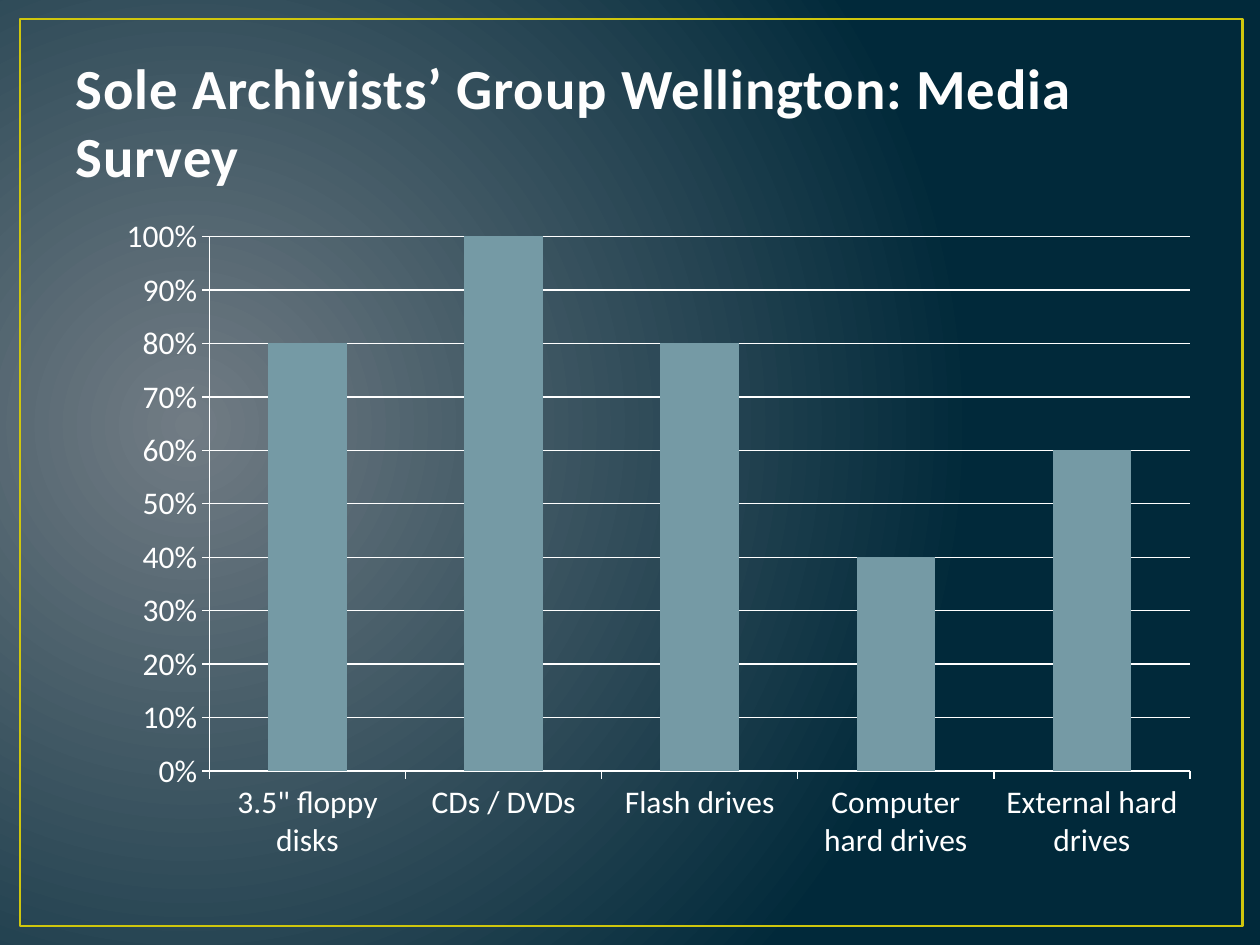
from dataclasses import dataclass

from lxml import etree
from pptx import Presentation
from pptx.chart.data import CategoryChartData
from pptx.dml.color import RGBColor
from pptx.enum.chart import XL_CHART_TYPE, XL_TICK_MARK
from pptx.enum.shapes import MSO_SHAPE
from pptx.enum.text import MSO_ANCHOR, MSO_AUTO_SIZE, PP_ALIGN
from pptx.oxml import parse_xml
from pptx.slide import Slide
from pptx.util import Inches, Pt

COLUMN = XL_CHART_TYPE.COLUMN_CLUSTERED
OUT, NONE = XL_TICK_MARK.OUTSIDE, XL_TICK_MARK.NONE
RECT = MSO_SHAPE.RECTANGLE
BOTTOM, LEFT = MSO_ANCHOR.BOTTOM, PP_ALIGN.LEFT
NO_FIT = MSO_AUTO_SIZE.NONE
SPACE = "http://schemas.openxmlformats.org/drawingml/2006/main"
WIDE, HIGH = 10, 7.5


@dataclass(frozen=True)
class Theme:
    font: str = "Calibri"
    glow: str = "717C84"
    night: str = "01293A"
    frame: str = "CFC60D"
    title: str = "FEFEFE"
    edge: str = "384F55"
    text: str = "FFFFFF"
    bar: str = "759AA5"
    head: float = 32.4
    label: float = 18


@dataclass(frozen=True)
class Box:
    left: float
    top: float
    width: float
    height: float

    def place(self) -> tuple:
        return (Inches(self.left * WIDE), Inches(self.top * HIGH),
                Inches(self.width * WIDE), Inches(self.height * HIGH))


@dataclass(frozen=True)
class Media:
    name: str
    share: float


THEME = Theme()
FRAME = Box(0.016, 0.02, 0.97, 0.96)
HEAD = Box(0.05, 0.04, 0.9, 0.1667)
PLOT = Box(0.083, 0.216, 0.879, 0.708)
SURVEY = [
    Media('3.5" floppy disks', 0.8),
    Media("CDs / DVDs", 1),
    Media("Flash drives", 0.8),
    Media("Computer hard drives", 0.4),
    Media("External hard drives", 0.6),
]


def rgb(code: str) -> RGBColor:
    return RGBColor.from_string(code)


def paint(slide: Slide) -> None:
    slide.background.fill.solid()
    fill = slide.element.find(f".//{{{SPACE}}}solidFill")
    stops = "".join(
        f'<a:gs pos="{pos}"><a:srgbClr val="{code}"/></a:gs>'
        for pos, code in ((0, THEME.glow), (100000, THEME.night)))
    grad = parse_xml(
        f'<a:gradFill xmlns:a="{SPACE}" rotWithShape="1"><a:gsLst>{stops}</a:gsLst>'
        '<a:path path="circle"><a:fillToRect l="15000" t="50000" r="85000" b="60000"/>'
        '</a:path></a:gradFill>')
    fill.getparent().replace(fill, grad)


def border(slide: Slide) -> None:
    shape = slide.shapes.add_shape(RECT, *FRAME.place())
    shape.shadow.inherit = False
    shape.fill.background()
    shape.line.color.rgb = rgb(THEME.frame)
    shape.line.width = Pt(1.5)
    tree = slide.shapes.title.element.getparent()
    tree.insert(2, shape.element)


def heading(slide: Slide, text: str) -> None:
    title = slide.shapes.title
    title.left, title.top, title.width, title.height = HEAD.place()
    frame = title.text_frame
    frame.word_wrap = True
    frame.auto_size = NO_FIT
    frame.vertical_anchor = BOTTOM
    para = frame.paragraphs[0]
    para.alignment = LEFT
    run = para.add_run()
    run.text = text
    font = run.font
    font.name, font.size, font.bold = THEME.font, Pt(THEME.head), True
    font.color.rgb = rgb(THEME.title)
    props = font._element
    props.set("spc", "50")
    line = etree.Element(f"{{{SPACE}}}ln", w=str(Pt(1.05)))
    fill = etree.SubElement(line, f"{{{SPACE}}}solidFill")
    etree.SubElement(fill, f"{{{SPACE}}}srgbClr", val=THEME.edge)
    props.insert(0, line)


def graph(slide: Slide, rows: list[Media]) -> None:
    data = CategoryChartData(number_format="0%")
    data.categories = [row.name for row in rows]
    data.add_series("Series 1", [row.share for row in rows])
    chart = slide.shapes.add_chart(COLUMN, *PLOT.place(), data).chart
    chart.has_legend = chart.has_title = False
    chart.font.name, chart.font.size = THEME.font, Pt(THEME.label)
    chart.font.color.rgb = rgb(THEME.text)
    plot = chart.plots[0]
    plot.gap_width, plot.vary_by_categories = 150, False
    fill = plot.series[0].format.fill
    fill.solid()
    fill.fore_color.rgb = rgb(THEME.bar)
    side = chart.value_axis
    side.minimum_scale, side.maximum_scale, side.major_unit = 0, 1, 0.1
    side.tick_labels.number_format = "0%"
    side.tick_labels.number_format_is_linked = False
    side.has_major_gridlines = True
    for axis in (chart.category_axis, side):
        axis.major_tick_mark, axis.minor_tick_mark = OUT, NONE
    for part in (chart.category_axis, side, side.major_gridlines):
        part.format.line.color.rgb = rgb(THEME.text)
        part.format.line.width = Pt(0.75)


def main() -> None:
    deck = Presentation()
    deck.slide_width, deck.slide_height = Inches(WIDE), Inches(HIGH)
    slide = deck.slides.add_slide(deck.slide_layouts[5])
    paint(slide)
    border(slide)
    heading(slide, "Sole Archivists’ Group Wellington: Media Survey")
    graph(slide, SURVEY)
    deck.save("out.pptx")


if __name__ == "__main__":
    main()
